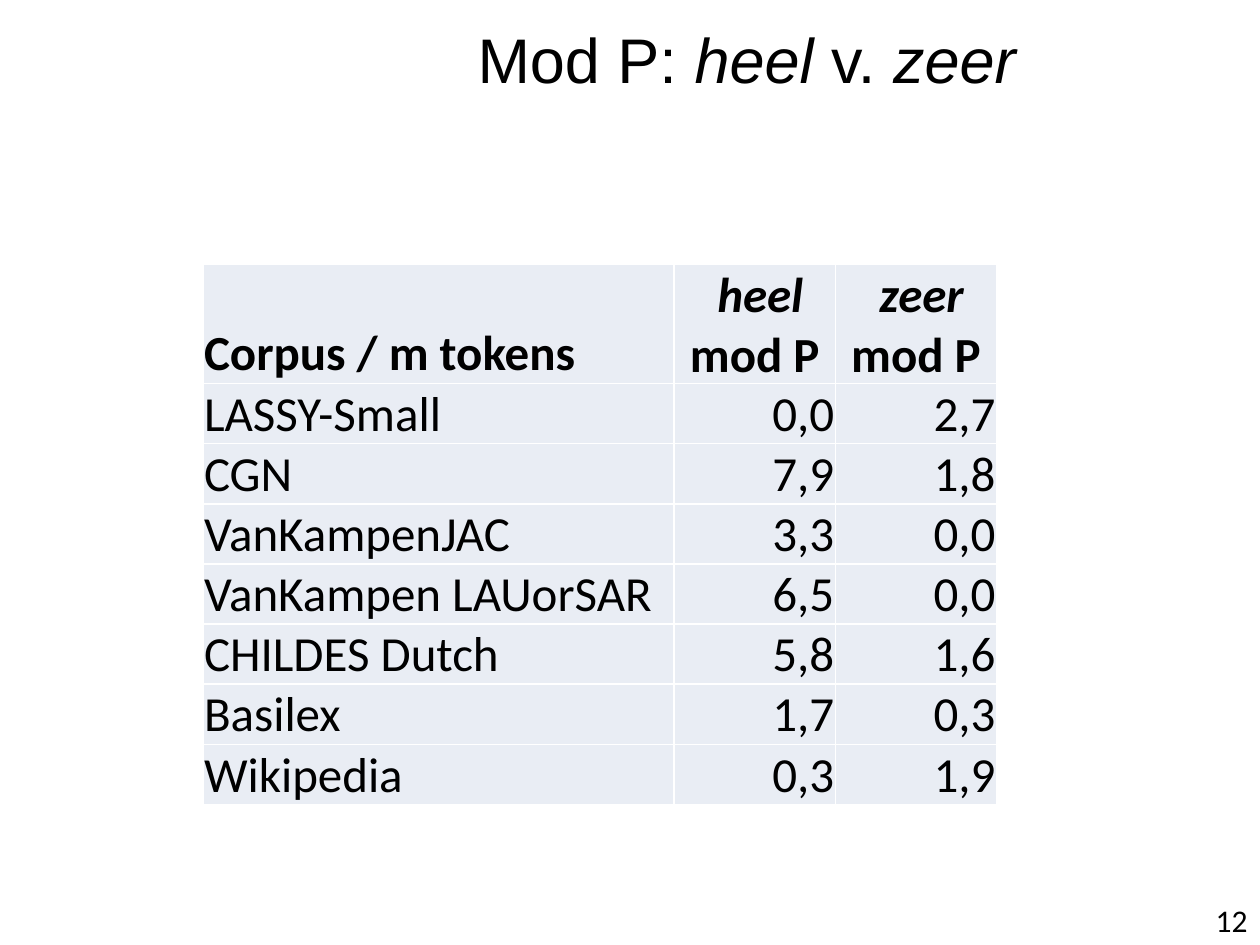
"""Build a slide with a table of modifier frequencies per corpus."""
from lxml.etree import SubElement
from pptx import Presentation
from pptx.dml.color import RGBColor
from pptx.enum.text import MSO_ANCHOR, PP_ALIGN
from pptx.oxml.ns import qn
from pptx.util import Inches, Pt


def write(paragraph, parts, alignment, size, font_name="Calibri", bold=False):
    """Fill a paragraph with text parts, every second one in italics."""
    paragraph.alignment = alignment
    for index, part in enumerate(parts):
        run = paragraph.add_run()
        run.text = part
        run.font.name = font_name
        run.font.size = Pt(size)
        run.font.bold = bold
        run.font.italic = index % 2 == 1
        run.font.color.rgb = RGBColor.from_string("000000")


def add_borders(cell, color, width):
    """Draw a solid line on all four sides of a table cell."""
    properties = cell._tc.get_or_add_tcPr()
    for position, side in enumerate(("a:lnL", "a:lnR", "a:lnT", "a:lnB")):
        line = SubElement(properties, qn(side), w=str(Pt(width)))
        SubElement(SubElement(line, qn("a:solidFill")), qn("a:srgbClr"), val=color)
        properties.insert(position, line)


presentation = Presentation()
presentation.slide_width = Inches(10)
presentation.slide_height = Inches(7.5)
slide = presentation.slides.add_slide(presentation.slide_layouts[6])

text_boxes = [
    ((1.85, 0, 8.15, 0.92), ["Mod P: ", "heel", " v. ", "zeer"],
     PP_ALIGN.CENTER, 36, "Arial", MSO_ANCHOR.MIDDLE),
    ((8.94, 7.1, 1.06, 0.4), ["12"], PP_ALIGN.RIGHT, 18, "Calibri", MSO_ANCHOR.TOP),
]
for place, parts, alignment, size, font_name, anchor in text_boxes:
    text_frame = slide.shapes.add_textbox(*map(Inches, place)).text_frame
    text_frame.word_wrap = True
    text_frame.vertical_anchor = anchor
    write(text_frame.paragraphs[0], parts, alignment, size, font_name)

rows = [
    (["Corpus / m tokens"], [" ", "heel ", "mod P"], [" ", "zeer ", "mod P"]),
    (["LASSY-Small"], ["0,0"], ["2,7"]),
    (["CGN"], ["7,9"], ["1,8"]),
    (["VanKampenJAC"], ["3,3"], ["0,0"]),
    (["VanKampen LAUorSAR"], ["6,5"], ["0,0"]),
    (["CHILDES Dutch"], ["5,8"], ["1,6"]),
    (["Basilex"], ["1,7"], ["0,3"]),
    (["Wikipedia"], ["0,3"], ["1,9"]),
]
column_widths = [3.74, 1.28, 1.28]
row_heights = [0.88] + [0.4] * (len(rows) - 1)
table = slide.shapes.add_table(
    len(rows), len(column_widths), Inches(1.61), Inches(2.1),
    Inches(sum(column_widths)), Inches(sum(row_heights))).table
for column, width in zip(table.columns, column_widths):
    column.width = Inches(width)

for row_index, row in enumerate(rows):
    table.rows[row_index].height = Inches(row_heights[row_index])
    is_header = row_index == 0
    for column_index, parts in enumerate(row):
        cell = table.cell(row_index, column_index)
        cell.fill.solid()
        cell.fill.fore_color.rgb = RGBColor.from_string("E9EDF4")
        cell.vertical_anchor = MSO_ANCHOR.BOTTOM
        cell.margin_left = cell.margin_right = cell.margin_top = Inches(0.01)
        cell.margin_bottom = 0
        add_borders(cell, "FFFFFF", 1)
        value_alignment = PP_ALIGN.CENTER if is_header else PP_ALIGN.RIGHT
        alignment = PP_ALIGN.LEFT if column_index == 0 else value_alignment
        write(cell.text_frame.paragraphs[0], parts, alignment, 28, bold=is_header)

presentation.save("out.pptx")
